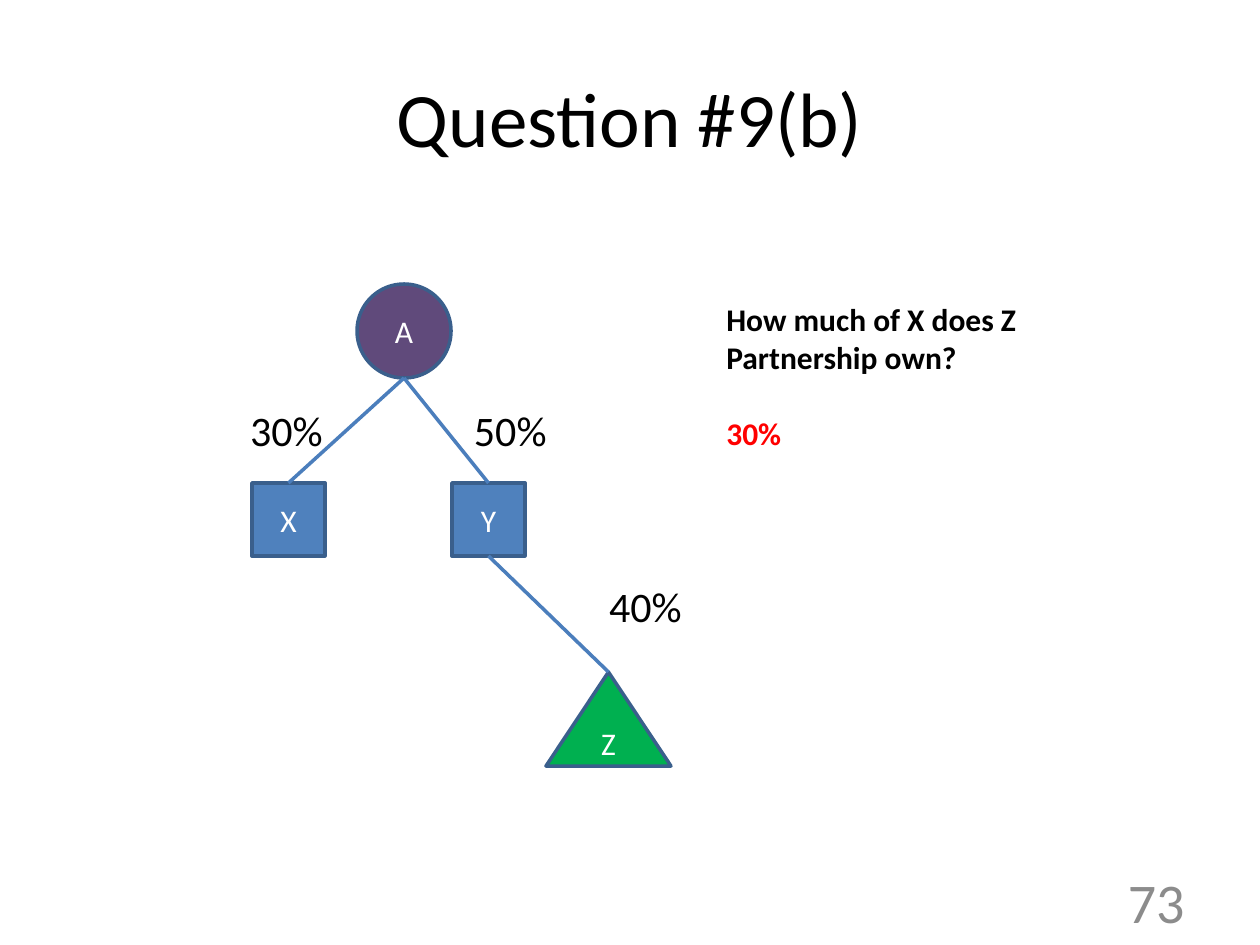
from lxml.etree import SubElement
from pptx import Presentation
from pptx.dml.color import RGBColor
from pptx.enum.shapes import MSO_CONNECTOR, MSO_SHAPE
from pptx.enum.text import MSO_ANCHOR, PP_ALIGN
from pptx.oxml.ns import qn
from pptx.util import Emu, Pt

EMU_PER_PX = 914400 / 126
TITLE_ONLY = 5


def px(value):
    return Emu(round(value * EMU_PER_PX))


def color(hex_code):
    return RGBColor.from_string(hex_code)


def place(shape, left, top, width, height):
    shape.left, shape.top = px(left), px(top)
    shape.width, shape.height = px(width), px(height)


def write(paragraph, text, size=18, fill="000000", bold=False,
          align=PP_ALIGN.LEFT, before=0):
    paragraph.alignment = align
    paragraph.space_before = Pt(before)
    run = paragraph.add_run()
    run.text = text
    run.font.name = "Calibri"
    run.font.size = Pt(size)
    run.font.bold = bold
    run.font.color.rgb = color(fill)


def add_text_box(slide, box, anchor=MSO_ANCHOR.TOP):
    shape = slide.shapes.add_textbox(*map(px, box))
    shape.text_frame.word_wrap = True
    shape.text_frame.vertical_anchor = anchor
    return shape.text_frame


def add_title(slide, text):
    title = slide.shapes.title
    place(title, 63, 38, 1134, 158)
    title.text_frame.vertical_anchor = MSO_ANCHOR.MIDDLE
    write(title.text_frame.paragraphs[0], text, size=44, align=PP_ALIGN.CENTER)


def add_entity(slide, name, kind, box, fill):
    entity = slide.shapes.add_shape(kind, *map(px, box))
    entity.shadow.inherit = False
    entity.fill.solid()
    entity.fill.fore_color.rgb = color(fill)
    entity.line.color.rgb = color("3A5F8C")
    entity.line.width = Pt(2)
    entity.text_frame.vertical_anchor = MSO_ANCHOR.MIDDLE
    write(entity.text_frame.paragraphs[0], name, fill="FFFFFF",
          align=PP_ALIGN.CENTER)
    return entity


def add_ownership_line(slide, owner, owned):
    line = slide.shapes.add_connector(
        MSO_CONNECTOR.STRAIGHT,
        owner.left + owner.width // 2, owner.top + owner.height,
        owned.left + owned.width // 2, owned.top)
    line.line.color.rgb = color("4B7EBC")
    line.line.width = Pt(2)
    SubElement(line._element.spPr, qn("a:effectLst"))


def add_share(slide, text, left, top):
    frame = add_text_box(slide, (left, top, 80, 51))
    frame.margin_left = frame.margin_right = 0
    frame.margin_top = frame.margin_bottom = 0
    write(frame.paragraphs[0], text, size=24)


def add_question(slide, question, answer):
    frame = add_text_box(slide, (714, 294, 451, 165))
    write(frame.paragraphs[0], question, bold=True)
    write(frame.add_paragraph(), answer, fill="FF0000", bold=True, before=22)


def add_slide_number(slide, number):
    frame = add_text_box(slide, (903, 876, 294, 50), MSO_ANCHOR.MIDDLE)
    write(frame.paragraphs[0], number, size=32, fill="8C8C8C",
          align=PP_ALIGN.RIGHT)


def main():
    presentation = Presentation()
    presentation.slide_width, presentation.slide_height = px(1260), px(945)
    slide = presentation.slides.add_slide(presentation.slide_layouts[TITLE_ONLY])
    add_title(slide, "Question #9(b)")

    entities = {
        name: add_entity(slide, name, kind, box, fill)
        for name, kind, box, fill in (
            ("A", MSO_SHAPE.OVAL, (357, 284, 94, 94), "604A7B"),
            ("X", MSO_SHAPE.RECTANGLE, (252, 483, 73, 73), "4F81BD"),
            ("Y", MSO_SHAPE.RECTANGLE, (452, 483, 73, 73), "4F81BD"),
            ("Z", MSO_SHAPE.ISOSCELES_TRIANGLE, (546, 672, 125, 94), "00B050"),
        )
    }
    for owner, owned, share, left, top in (
        ("A", "X", "30%", 250, 405),
        ("A", "Y", "50%", 474, 405),
        ("Y", "Z", "40%", 609, 581),
    ):
        add_ownership_line(slide, entities[owner], entities[owned])
        add_share(slide, share, left, top)

    add_question(slide, "How much of X does Z Partnership own?", "30%")
    add_slide_number(slide, "73")
    presentation.save("out.pptx")


if __name__ == "__main__":
    main()
